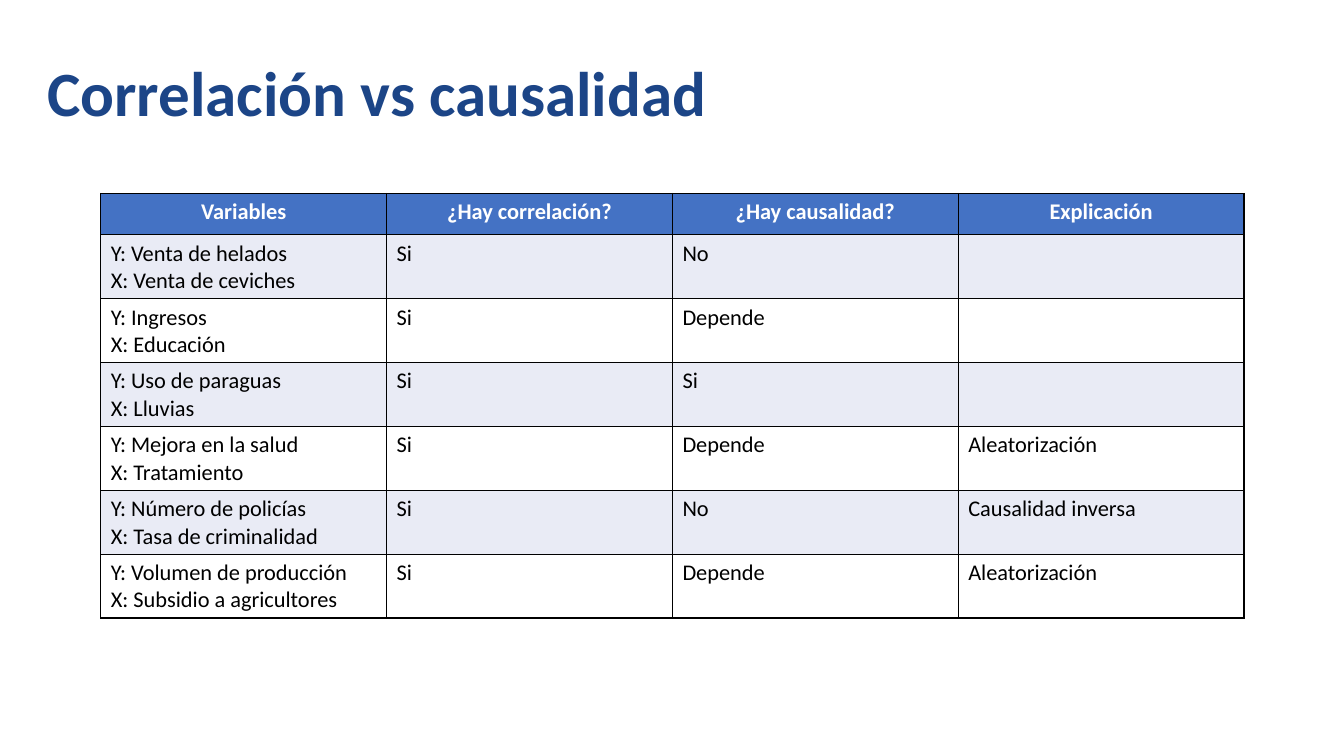
"""Build the slide comparing correlation and causality."""
from lxml.etree import SubElement
from pptx import Presentation
from pptx.dml.color import RGBColor
from pptx.enum.text import PP_ALIGN
from pptx.oxml.ns import qn
from pptx.util import Inches, Pt

COLORS = {
    "title": "1C4587",
    "header": "4472C4",
    "band": "E9EBF5",
    "white": "FFFFFF",
    "black": "000000",
}
FONT = "Calibri"
HEADERS = ["Variables", "¿Hay correlación?", "¿Hay causalidad?", "Explicación"]
ROWS = [
    ["Y: Venta de helados\nX: Venta de ceviches", "Si", "No", ""],
    ["Y: Ingresos\nX: Educación", "Si", "Depende", ""],
    ["Y: Uso de paraguas\nX: Lluvias", "Si", "Si", ""],
    ["Y: Mejora en la salud\nX: Tratamiento", "Si", "Depende", "Aleatorización"],
    ["Y: Número de policías\nX: Tasa de criminalidad", "Si", "No", "Causalidad inversa"],
    ["Y: Volumen de producción\nX: Subsidio a agricultores", "Si", "Depende", "Aleatorización"],
]


def style_font(font, size, color, bold):
    font.name = FONT
    font.size = Pt(size)
    font.bold = bold
    font.color.rgb = RGBColor.from_string(COLORS[color])


def add_borders(cell):
    properties = cell._tc.get_or_add_tcPr()
    for side in ("a:lnL", "a:lnR", "a:lnT", "a:lnB"):
        line = SubElement(properties, qn(side), w=str(Pt(1)))
        fill = SubElement(line, qn("a:solidFill"))
        SubElement(fill, qn("a:srgbClr"), val=COLORS["black"])


presentation = Presentation()
presentation.slide_width = Inches(13.33)
presentation.slide_height = Inches(7.5)
slide = presentation.slides.add_slide(presentation.slide_layouts[6])

title = slide.shapes.add_textbox(Inches(0.37), Inches(0.43), Inches(12.59), Inches(0.96))
title_frame = title.text_frame
title_frame.word_wrap = True
title_frame.margin_left = title_frame.margin_right = Inches(0.1)
title_frame.margin_top = title_frame.margin_bottom = Inches(0.1)
title_frame.text = "Correlación vs causalidad"
style_font(title_frame.paragraphs[0].runs[0].font, 45, "title", True)

table_rows = [HEADERS] + ROWS
table = slide.shapes.add_table(
    len(table_rows), len(HEADERS), Inches(1), Inches(1.92), Inches(11.34), Inches(4.21)
).table
for column in table.columns:
    column.width = Inches(11.34 / len(HEADERS))

for row_index, row_texts in enumerate(table_rows):
    is_header = row_index == 0
    table.rows[row_index].height = Inches(0.41 if is_header else 0.63)
    fill_color = "header" if is_header else "band" if row_index % 2 else "white"
    for column_index, text in enumerate(row_texts):
        cell = table.cell(row_index, column_index)
        add_borders(cell)
        cell.fill.solid()
        cell.fill.fore_color.rgb = RGBColor.from_string(COLORS[fill_color])
        cell.text_frame.text = text
        for paragraph in cell.text_frame.paragraphs:
            paragraph.alignment = PP_ALIGN.CENTER if is_header else PP_ALIGN.LEFT
            for run in paragraph.runs:
                style_font(run.font, 16, "white" if is_header else "black", is_header)

presentation.save("out.pptx")
